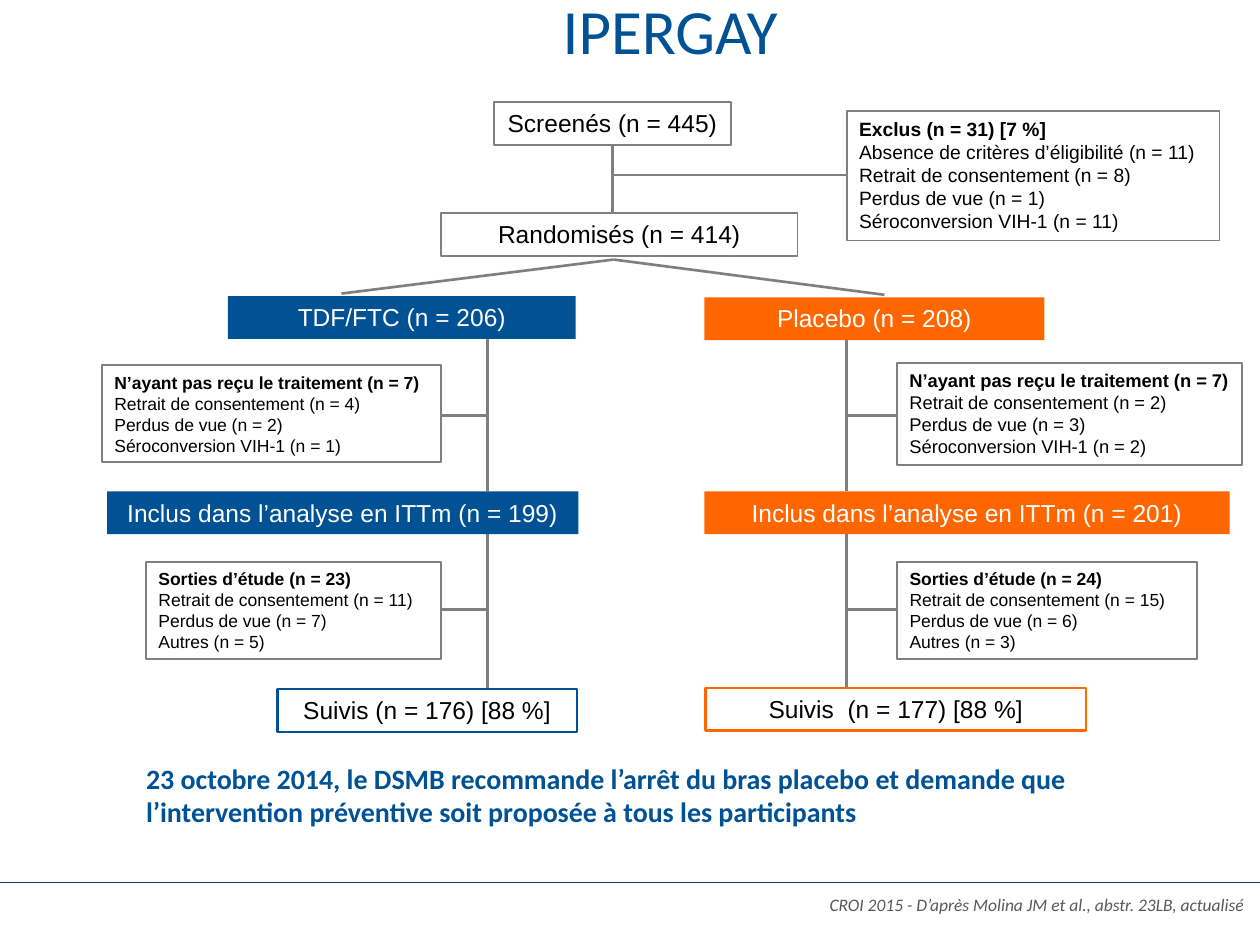
from lxml import etree
from pptx import Presentation
from pptx.dml.color import RGBColor
from pptx.enum.shapes import MSO_CONNECTOR as CONN, MSO_SHAPE as SHAPE
from pptx.enum.text import MSO_ANCHOR as ANCHOR, PP_ALIGN as ALIGN
from pptx.oxml.ns import qn
from pptx.util import Inches, Pt

BLUE, ORANGE = "005294", "FF6600"
BLACK, WHITE, GREY, LINE_GREY = "000000", "FFFFFF", "808080", "7F7F7F"
BAR_H = 0.34


def rgb(hex_color):
    return RGBColor.from_string(hex_color)


def count(label, n, rate=None):
    """Label with its headcount and, if given, its percentage."""
    text = f"{label} (n = {n})"
    return f"{text} [{rate} %]" if rate else text


class FlowSlide:
    def __init__(self, prs):
        self.s = prs.slides.add_slide(prs.slide_layouts[6])

    def run(self, p, text, size, color, font="Arial", bold=False, italic=False):
        r = p.add_run()
        r.text = text
        f = r.font
        f.name, f.size, f.bold, f.italic = font, Pt(size), bold, italic
        f.color.rgb = rgb(color)

    def text(self, x, y, w, h, text, size, color, align=ALIGN.LEFT,
             anchor=ANCHOR.TOP, spacing=None, bold=False, italic=False):
        tf = self.s.shapes.add_textbox(
            Inches(x), Inches(y), Inches(w), Inches(h)).text_frame
        tf.word_wrap = True
        tf.vertical_anchor = anchor
        tf.margin_left = tf.margin_right = tf.margin_top = tf.margin_bottom = 0
        p = tf.paragraphs[0]
        p.alignment = align
        if spacing:
            p.line_spacing = Pt(spacing)
        self.run(p, text, size, color, "Calibri", bold, italic)

    def box(self, x, y, w, h, fill, line=None, weight=1):
        """Rectangle without text; returns its text frame."""
        sp = self.s.shapes.add_shape(
            SHAPE.RECTANGLE, Inches(x), Inches(y), Inches(w), Inches(h))
        sp.shadow.inherit = False
        sp.fill.solid()
        sp.fill.fore_color.rgb = rgb(fill)
        if line:
            sp.line.color.rgb = rgb(line)
            sp.line.width = Pt(weight)
        else:
            sp.line.fill.background()
        tf = sp.text_frame
        tf.word_wrap = True
        tf.vertical_anchor = ANCHOR.TOP
        return tf

    def bar(self, x, y, w, text, fill=WHITE, line=None, weight=1):
        """One-line centred step of the flow."""
        tf = self.box(x, y, w, BAR_H, fill, line, weight)
        p = tf.paragraphs[0]
        p.alignment = ALIGN.CENTER
        self.run(p, text, 14, BLACK if fill == WHITE else WHITE)

    def details(self, x, y, w, h, size, heading, reasons):
        """Bold heading followed by one line per reason."""
        tf = self.box(x, y, w, h, WHITE, GREY)
        for i, text in enumerate([heading] + [count(*r) for r in reasons]):
            p = tf.add_paragraph() if i else tf.paragraphs[0]
            p.alignment = ALIGN.LEFT
            self.run(p, text, size, BLACK, bold=i == 0)

    def line(self, x1, y1, x2, y2, color=LINE_GREY, weight=1.5):
        cx = self.s.shapes.add_connector(
            CONN.STRAIGHT, Inches(x1), Inches(y1), Inches(x2), Inches(y2))
        cx.line.color.rgb = rgb(color)
        cx.line.width = Pt(weight)
        etree.SubElement(cx._element.spPr, qn("a:effectLst"))


CONSENT, LOST = "Retrait de consentement", "Perdus de vue"
SERO = "Séroconversion VIH-1"
UNTREATED, LEFT_STUDY = "N’ayant pas reçu le traitement", "Sorties d’étude"
ANALYSED = "Inclus dans l’analyse en ITTm"

# Bars: x, y, width, text. Details: x, y, width, height, size, heading, reasons.
ARMS = [
    dict(color=BLUE, trunk=3.87, side=3.5,
         start=(1.81, 2.35, 2.76, count("TDF/FTC", 206)),
         analysed=(0.85, 3.9, 3.74, count(ANALYSED, 199)),
         followed=(2.2, 5.47, 2.38, count("Suivis", 176, 88)),
         details=[(0.81, 2.9, 2.69, 0.77, 10, count(UNTREATED, 7),
                   [(CONSENT, 4), (LOST, 2), (SERO, 1)]),
                  (1.16, 4.46, 2.34, 0.77, 10, count(LEFT_STUDY, 23),
                   [(CONSENT, 11), (LOST, 7), ("Autres", 5)])]),
    dict(color=ORANGE, trunk=6.72, side=7.12,
         start=(5.59, 2.36, 2.7, count("Placebo", 208)),
         analysed=(5.59, 3.9, 4.17, count(ANALYSED, 201)),
         followed=(5.6, 5.46, 3.02, count("Suivis ", 177, 88)),
         details=[(7.12, 2.88, 2.74, 0.81, 10.5, count(UNTREATED, 7),
                   [(CONSENT, 2), (LOST, 3), (SERO, 2)]),
                  (7.12, 4.46, 2.38, 0.77, 10, count(LEFT_STUDY, 24),
                   [(CONSENT, 15), (LOST, 6), ("Autres", 3)])]),
]


def draw_arm(slide, arm):
    trunk, color = arm["trunk"], arm["color"]
    for top, bottom, branch in ((2.69, 3.9, 3.3), (4.24, 5.47, 4.84)):
        slide.line(trunk, top, trunk, bottom)
        slide.line(trunk, branch, arm["side"], branch)
    slide.bar(*arm["start"], fill=color)
    slide.bar(*arm["analysed"], fill=color)
    slide.bar(*arm["followed"], line=color, weight=1.5)
    for block in arm["details"]:
        slide.details(*block)


def main():
    prs = Presentation()
    prs.slide_width, prs.slide_height = Inches(10), Inches(7.5)
    slide = FlowSlide(prs)

    slide.line(0, 7, 10, 7, "17375E", 0.25)
    slide.text(1.14, 0.16, 8.36, 0.44, "IPERGAY", 36, BLUE,
               ALIGN.CENTER, ANCHOR.MIDDLE, spacing=22)
    slide.text(1.16, 6.04, 8.34, 0.58,
               "23 octobre 2014, le DSMB recommande l’arrêt du bras placebo et "
               "demande que l’intervention préventive soit proposée à tous les "
               "participants", 16, BLUE, bold=True)
    slide.text(3.53, 7, 6.34, 0.36,
               "CROI 2015 - D’après Molina JM et al., abstr. 23LB, actualisé",
               10, "595959", ALIGN.RIGHT, ANCHOR.MIDDLE, italic=True)

    slide.line(4.86, 1.06, 4.86, 1.68)
    slide.line(4.86, 1.39, 6.83, 1.39)
    slide.line(4.87, 2.06, 2.71, 2.33)
    slide.line(4.87, 2.06, 7.02, 2.34)
    slide.bar(3.92, 0.81, 1.88, count("Screenés", 445), line=GREY)
    slide.bar(3.5, 1.69, 2.83, count("Randomisés", 414), line=GREY)
    slide.details(6.72, 0.88, 2.96, 1.03, 11, count("Exclus", 31, 7),
                  [("Absence de critères d’éligibilité", 11), (CONSENT, 8),
                   (LOST, 1), (SERO, 11)])
    for arm in ARMS:
        draw_arm(slide, arm)

    prs.save("out.pptx")


if __name__ == "__main__":
    main()
